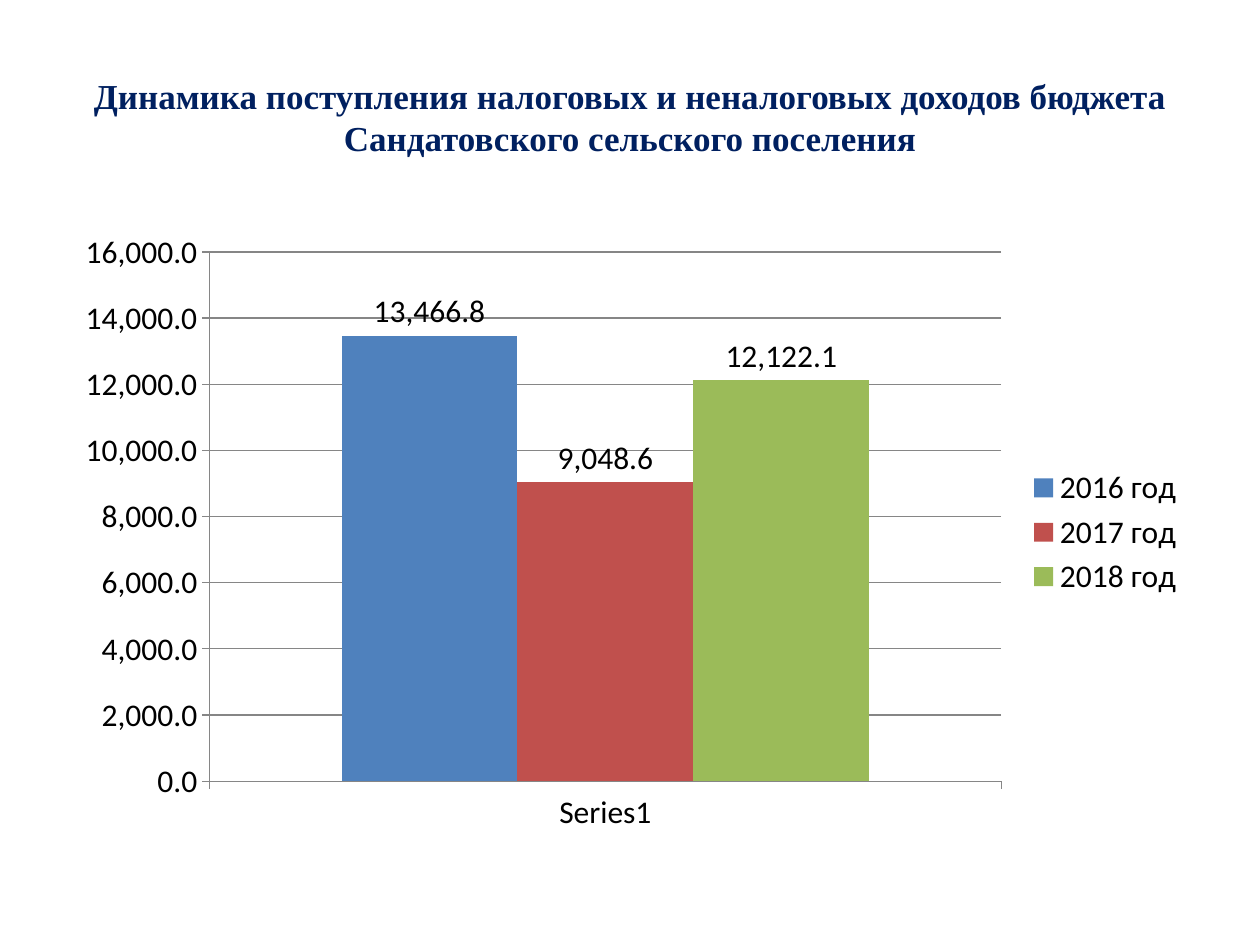
from dataclasses import dataclass

from pptx import Presentation
from pptx.chart.data import CategoryChartData
from pptx.dml.color import RGBColor
from pptx.enum.chart import (XL_CHART_TYPE, XL_LABEL_POSITION,
                             XL_LEGEND_POSITION, XL_TICK_MARK)
from pptx.enum.text import MSO_ANCHOR, PP_ALIGN
from pptx.util import Inches, Pt

COLUMNS = XL_CHART_TYPE.COLUMN_CLUSTERED
LABEL_ABOVE = XL_LABEL_POSITION.OUTSIDE_END
LEGEND_RIGHT = XL_LEGEND_POSITION.RIGHT
TICK_OUT = XL_TICK_MARK.OUTSIDE
MIDDLE = MSO_ANCHOR.MIDDLE
CENTER = PP_ALIGN.CENTER

WIDTH, HEIGHT = Inches(10), Inches(7.5)
MARGIN = Inches(0.5)
CONTENT_WIDTH = WIDTH - 2 * MARGIN
TITLE_ONLY_LAYOUT = 5

HEADING = ("Динамика поступления налоговых и неналоговых доходов бюджета "
           "Сандатовского сельского поселения")
REVENUE = {"2016 год": 13466.8, "2017 год": 9048.6, "2018 год": 12122.1}
NUMBER_FORMAT = "#,##0.0"


@dataclass(frozen=True)
class Theme:
    heading_font: str = "Times New Roman"
    heading_size: int = 20
    heading_color: str = "002060"
    chart_font: str = "Calibri"
    chart_size: int = 18
    text_color: str = "000000"
    line_color: str = "868686"
    year_colors: tuple = ("4F81BD", "C0504D", "9BBB59")


THEME = Theme()


def style_font(font, name, size, color, bold=False):
    font.name, font.size, font.bold = name, Pt(size), bold
    font.color.rgb = RGBColor.from_string(color)


def style_line(line):
    line.color.rgb = RGBColor.from_string(THEME.line_color)
    line.width = Pt(0.75)


def add_heading(slide):
    heading = slide.shapes.title
    heading.left, heading.top = MARGIN, Inches(0.3)
    heading.width, heading.height = CONTENT_WIDTH, Inches(1.25)
    frame = heading.text_frame
    frame.word_wrap = True
    frame.vertical_anchor = MIDDLE
    paragraph = frame.paragraphs[0]
    paragraph.alignment = CENTER
    run = paragraph.add_run()
    run.text = HEADING
    style_font(run.font, THEME.heading_font, THEME.heading_size,
               THEME.heading_color, bold=True)


def style_axes(chart):
    for axis in (chart.category_axis, chart.value_axis):
        axis.major_tick_mark = TICK_OUT
        style_line(axis.format.line)
    values = chart.value_axis
    values.minimum_scale, values.maximum_scale = 0, 16000
    values.major_unit = 2000
    values.has_major_gridlines = True
    style_line(values.major_gridlines.format.line)
    values.tick_labels.number_format = NUMBER_FORMAT
    values.tick_labels.number_format_is_linked = False


def style_columns(plot):
    plot.gap_width, plot.overlap = 150, 0
    plot.vary_by_categories = False
    for year, color in zip(plot.series, THEME.year_colors):
        year.format.fill.solid()
        year.format.fill.fore_color.rgb = RGBColor.from_string(color)
        labels = year.data_labels
        labels.show_value = True
        labels.position = LABEL_ABOVE
        labels.number_format = NUMBER_FORMAT
        labels.number_format_is_linked = False


def add_revenue_chart(slide):
    data = CategoryChartData(number_format=NUMBER_FORMAT)
    data.categories = ["Series1"]
    for year, amount in REVENUE.items():
        data.add_series(year, [amount])
    chart = slide.shapes.add_chart(COLUMNS, MARGIN, Inches(1.75),
                                   CONTENT_WIDTH, Inches(4.95), data).chart
    chart.has_title = False
    style_font(chart.font, THEME.chart_font, THEME.chart_size,
               THEME.text_color)
    chart.has_legend = True
    chart.legend.position = LEGEND_RIGHT
    chart.legend.include_in_layout = False
    style_axes(chart)
    style_columns(chart.plots[0])


def main():
    deck = Presentation()
    deck.slide_width, deck.slide_height = WIDTH, HEIGHT
    slide = deck.slides.add_slide(deck.slide_layouts[TITLE_ONLY_LAYOUT])
    add_heading(slide)
    add_revenue_chart(slide)
    deck.save("out.pptx")


if __name__ == "__main__":
    main()
